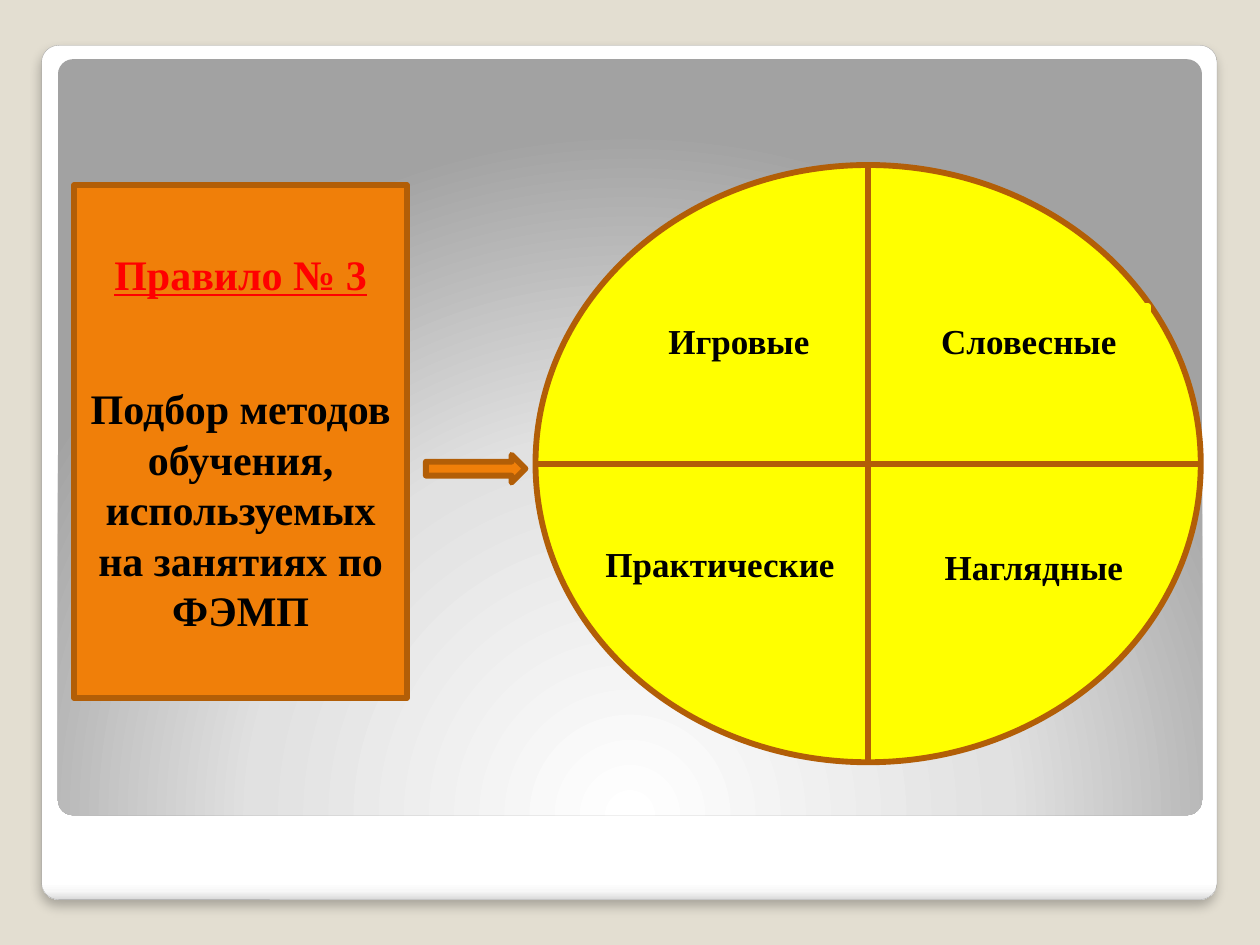
from dataclasses import dataclass

from lxml.etree import SubElement
from pptx import Presentation
from pptx.dml.color import RGBColor
from pptx.enum.shapes import MSO_SHAPE
from pptx.enum.text import MSO_ANCHOR, PP_ALIGN
from pptx.oxml import parse_xml
from pptx.oxml.ns import nsdecls, qn
from pptx.util import Inches, Pt


@dataclass(frozen=True)
class Theme:
    font: str = "Times New Roman"
    background: str = "E3DED1"
    frame_line: str = "A4A4A4"
    orange: str = "F07F09"
    brown: str = "B25E07"
    yellow: str = "FFFF00"
    red: str = "FF0000"
    black: str = "000000"
    rule_size: int = 24
    label_size: int = 20
    outline: float = 3.35


THEME = Theme()

# Content
RULE_TITLE = "Правило № 3"
RULE_TEXT = "Подбор методов обучения, используемых на занятиях по ФЭМП"
ROW_TOPS = (2.43, 4.24)
# Text, row, left, width, height
METHODS = [
    ("Игровые", 0, 5, 1.73, 0.55),
    ("Практические", 1, 4.69, 2.05, 0.47),
    ("Наглядные", 1, 7.26, 1.89, 0.51),
    ("Словесные", 0, 7.22, 1.89, 0.55),
]

# Gradient stops (percent, colour) and directions of the backdrop
FRAME_STOPS = [(0, "FFFFFF"), (98, "FFFFFF"), (99, "F7F7F7"), (100, "DADADA")]
PANEL_STOPS = [(0, "FFFFFF"), (55, "E1E1E1"), (100, "A2A2A2")]
DOWNWARD = '<a:lin ang="5400000" scaled="0"/>'
FROM_BELOW = ('<a:path path="circle"><a:fillToRect l="50000" t="175000" '
              'r="50000" b="-75000"/></a:path>')


def add_box(slide, kind, box, fill=None, line=None, line_width=THEME.outline):
    shape = slide.shapes.add_shape(kind, *(Inches(length) for length in box))
    shape.shadow.inherit = False
    if fill:
        shape.fill.solid()
        shape.fill.fore_color.rgb = RGBColor.from_string(fill)
    if line:
        shape.line.color.rgb = RGBColor.from_string(line)
        shape.line.width = Pt(line_width)
    else:
        shape.line.fill.background()
    return shape


def add_text(shape, text, size, color=THEME.black, underline=False, space_before=0):
    frame = shape.text_frame
    frame.word_wrap = True
    frame.vertical_anchor = MSO_ANCHOR.MIDDLE
    paragraph = frame.add_paragraph() if frame.text else frame.paragraphs[0]
    paragraph.alignment = PP_ALIGN.CENTER
    if space_before:
        paragraph.space_before = Pt(space_before)
    run = paragraph.add_run()
    run.text = text
    font = run.font
    font.name, font.size, font.bold = THEME.font, Pt(size), True
    font.underline = underline
    font.color.rgb = RGBColor.from_string(color)


def add_panel(slide, box, stops, direction, **line):
    shape = add_box(slide, MSO_SHAPE.ROUNDED_RECTANGLE, box, **line)
    shape.adjustments[0] = 0.02
    stop_list = "".join(
        f'<a:gs pos="{percent * 1000}"><a:srgbClr val="{color}"/></a:gs>'
        for percent, color in stops)
    gradient = parse_xml(f'<a:gradFill {nsdecls("a")} rotWithShape="1">'
                         f'<a:gsLst>{stop_list}</a:gsLst>{direction}</a:gradFill>')
    shape._element.spPr.find(qn("a:prstGeom")).addnext(gradient)
    return shape


def add_soft_shadow(shape):
    effects = shape._element.spPr.find(qn("a:effectLst"))
    shadow = SubElement(effects, qn("a:outerShdw"), blurRad=str(Pt(6)),
                        dist=str(Pt(4)), dir="5400000", rotWithShape="0")
    color = SubElement(shadow, qn("a:srgbClr"), val=THEME.black)
    SubElement(color, qn("a:alpha"), val="25000")


def main():
    presentation = Presentation()
    presentation.slide_width, presentation.slide_height = Inches(10), Inches(7.5)
    slide = presentation.slides.add_slide(presentation.slide_layouts[6])

    # Backdrop
    slide.background.fill.solid()
    slide.background.fill.fore_color.rgb = RGBColor.from_string(THEME.background)
    frame = add_panel(slide, (0.33, 0.36, 9.33, 6.78), FRAME_STOPS, DOWNWARD,
                      line=THEME.frame_line, line_width=0.16)
    add_soft_shadow(frame)
    add_panel(slide, (0.46, 0.47, 9.08, 6), PANEL_STOPS, FROM_BELOW)

    # Rule card and arrow
    card = add_box(slide, MSO_SHAPE.RECTANGLE, (0.59, 1.47, 2.64, 4.07),
                   THEME.orange, THEME.brown)
    add_text(card, RULE_TITLE, THEME.rule_size, color=THEME.red, underline=True)
    add_text(card, RULE_TEXT, THEME.rule_size, space_before=48)
    add_box(slide, MSO_SHAPE.RIGHT_ARROW, (3.38, 3.61, 0.79, 0.22),
            THEME.orange, THEME.brown)

    # Circle of methods
    add_box(slide, MSO_SHAPE.FLOWCHART_OR, (4.25, 1.31, 5.28, 4.74),
            THEME.yellow, THEME.brown)
    for text, row, left, width, height in METHODS:
        label = add_box(slide, MSO_SHAPE.FLOWCHART_PROCESS,
                        (left, ROW_TOPS[row], width, height),
                        THEME.yellow, THEME.yellow)
        add_text(label, text, THEME.label_size)

    presentation.save("out.pptx")


if __name__ == "__main__":
    main()
